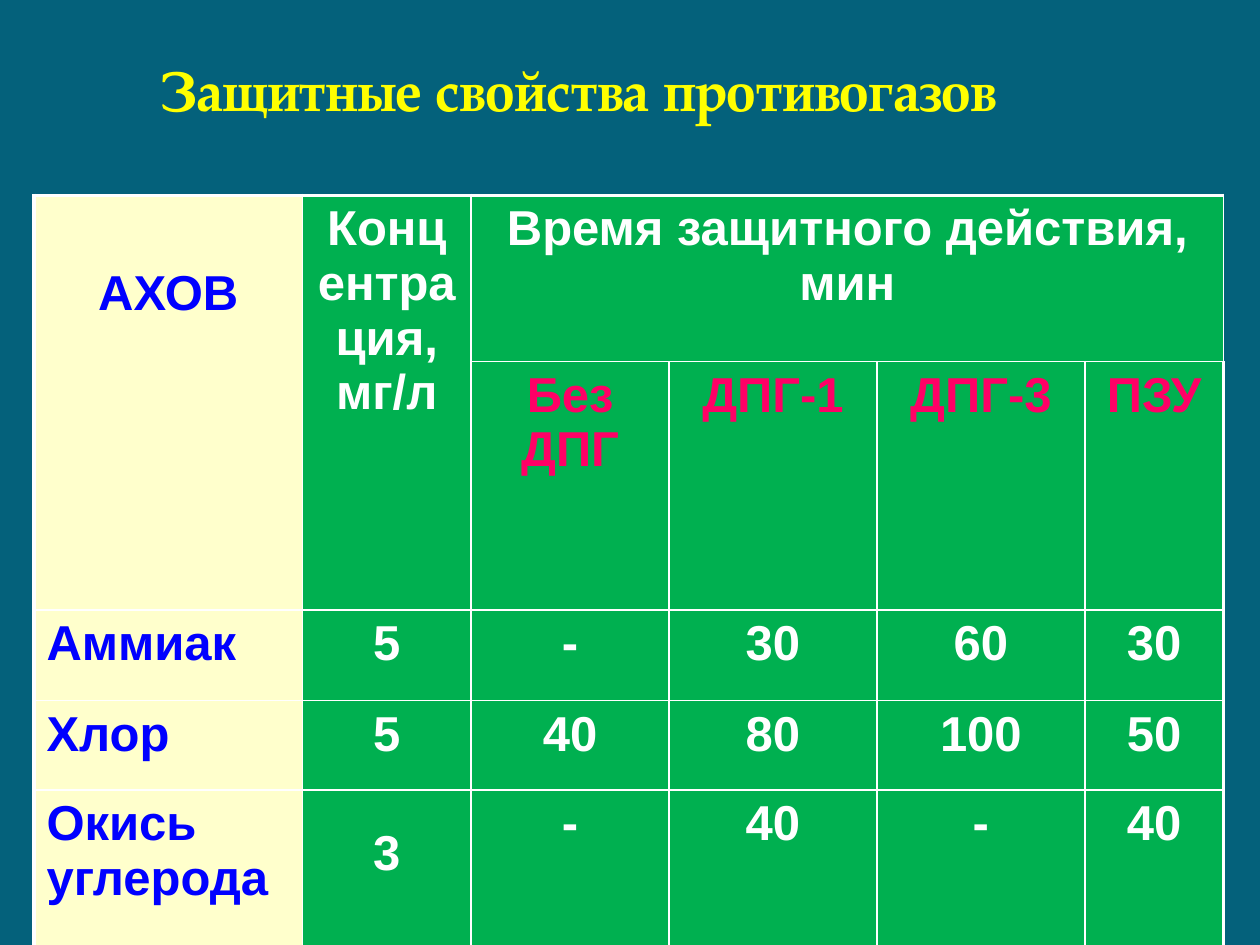
from lxml import etree
from pptx import Presentation
from pptx.dml.color import RGBColor
from pptx.enum import text
from pptx.oxml import ns
from pptx.util import Inches, Pt

DEEP_TEAL = RGBColor(0x04, 0x61, 0x7B)
YELLOW = RGBColor(0xFF, 0xFF, 0x00)
CREAM = RGBColor(0xFF, 0xFF, 0xCC)
GREEN = RGBColor(0x00, 0xB0, 0x50)
BLUE = RGBColor(0x00, 0x00, 0xFF)
PINK = RGBColor(0xFF, 0x00, 0x66)
WHITE = RGBColor(0xFF, 0xFF, 0xFF)

COLUMN_WIDTHS = [2.13, 1.34, 1.57, 1.65, 1.65, 1.1]
ROW_HEIGHTS = [1.32, 1.97, 0.72, 0.71, 1.32]
PROTECTION_TIMES = [
    ["АХОВ", "Концентрация, мг/л", "Время защитного действия, мин", "", "", ""],
    ["", "", "Без ДПГ", "ДПГ-1", "ДПГ-3", "ПЗУ"],
    ["Аммиак", "5", "-", "30", "60", "30"],
    ["Хлор", "5", "40", "80", "100", "50"],
    ["Окись углерода", "3", "-", "40", "-", "40"],
]
LOWERED_CELLS = {(0, 0): 0.56, (4, 1): 0.29}
MERGES = [((0, 0), (1, 0)), ((0, 1), (1, 1)), ((0, 2), (0, 5))]
THIN, THICK = Pt(1), Pt(2.25)


def style_font(paragraph, name, size, color):
    """Give a paragraph a bold font."""
    font = paragraph.font
    font.name, font.size, font.bold = name, Pt(size), True
    font.color.rgb = color


def add_borders(cell, widths):
    """Draw white cell borders with a width for each side."""
    properties = cell._tc.get_or_add_tcPr()
    for index, (side, width) in enumerate(widths.items()):
        line = etree.Element(ns.qn(f"a:ln{side}"), w=str(width))
        fill = etree.SubElement(line, ns.qn("a:solidFill"))
        etree.SubElement(fill, ns.qn("a:srgbClr"), val=str(WHITE))
        properties.insert(index, line)


def place_title(slide, left, top, width, height):
    """Place the slide heading in its box."""
    title = slide.shapes.title
    title.left, title.top, title.width, title.height = left, top, width, height
    frame = title.text_frame
    frame.text = "Защитные свойства противогазов"
    frame.auto_size = text.MSO_AUTO_SIZE.NONE
    frame.vertical_anchor = text.MSO_ANCHOR.TOP
    heading = frame.paragraphs[0]
    heading.alignment = text.PP_ALIGN.LEFT
    style_font(heading, "TeX Gyre Pagella", 32, YELLOW)


def fill_cell(cell, row, column, wording):
    """Write and colour one cell according to its place in the table."""
    is_substance = column == 0
    cell.fill.solid()
    cell.fill.fore_color.rgb = CREAM if is_substance else GREEN
    cell.margin_top = Inches(LOWERED_CELLS.get((row, column), 0.05))
    add_borders(cell, {
        "L": THICK if column == 0 else THIN,
        "R": THICK if column == len(COLUMN_WIDTHS) - 1 else THIN,
        "T": THICK if row == 0 else THIN,
        "B": THICK if row == len(ROW_HEIGHTS) - 1 else THIN,
    })
    if not wording:
        return
    cell.text = wording
    entry = cell.text_frame.paragraphs[0]
    left_aligned = is_substance and row > 1
    entry.alignment = text.PP_ALIGN.LEFT if left_aligned else text.PP_ALIGN.CENTER
    color = BLUE if is_substance else PINK if row == 1 else WHITE
    style_font(entry, "Arial", 28, color)


def place_protection_table(slide, left, top, width, height):
    """Place the table of gas mask protection times in its box."""
    table = slide.shapes.add_table(
        len(ROW_HEIGHTS), len(COLUMN_WIDTHS), left, top, width, height).table
    table.horz_banding = False
    for column, share in zip(table.columns, COLUMN_WIDTHS):
        column.width = int(width * share / sum(COLUMN_WIDTHS))
    for row, share in zip(table.rows, ROW_HEIGHTS):
        row.height = int(height * share / sum(ROW_HEIGHTS))
    for first, last in MERGES:
        table.cell(*first).merge(table.cell(*last))
    for row, entries in enumerate(PROTECTION_TIMES):
        for column, wording in enumerate(entries):
            fill_cell(table.cell(row, column), row, column, wording)


def main():
    """Build and save the slide."""
    deck = Presentation()
    deck.slide_width, deck.slide_height = Inches(10), Inches(7.5)
    slide = deck.slides.add_slide(deck.slide_layouts[5])
    slide.background.fill.solid()
    slide.background.fill.fore_color.rgb = DEEP_TEAL
    place_title(slide, Inches(1.17), Inches(0.39), Inches(9.29), Inches(0.64))
    place_protection_table(slide, Inches(0.27), Inches(1.55),
                           Inches(sum(COLUMN_WIDTHS)), Inches(sum(ROW_HEIGHTS)))
    deck.save("out.pptx")


if __name__ == "__main__":
    main()
